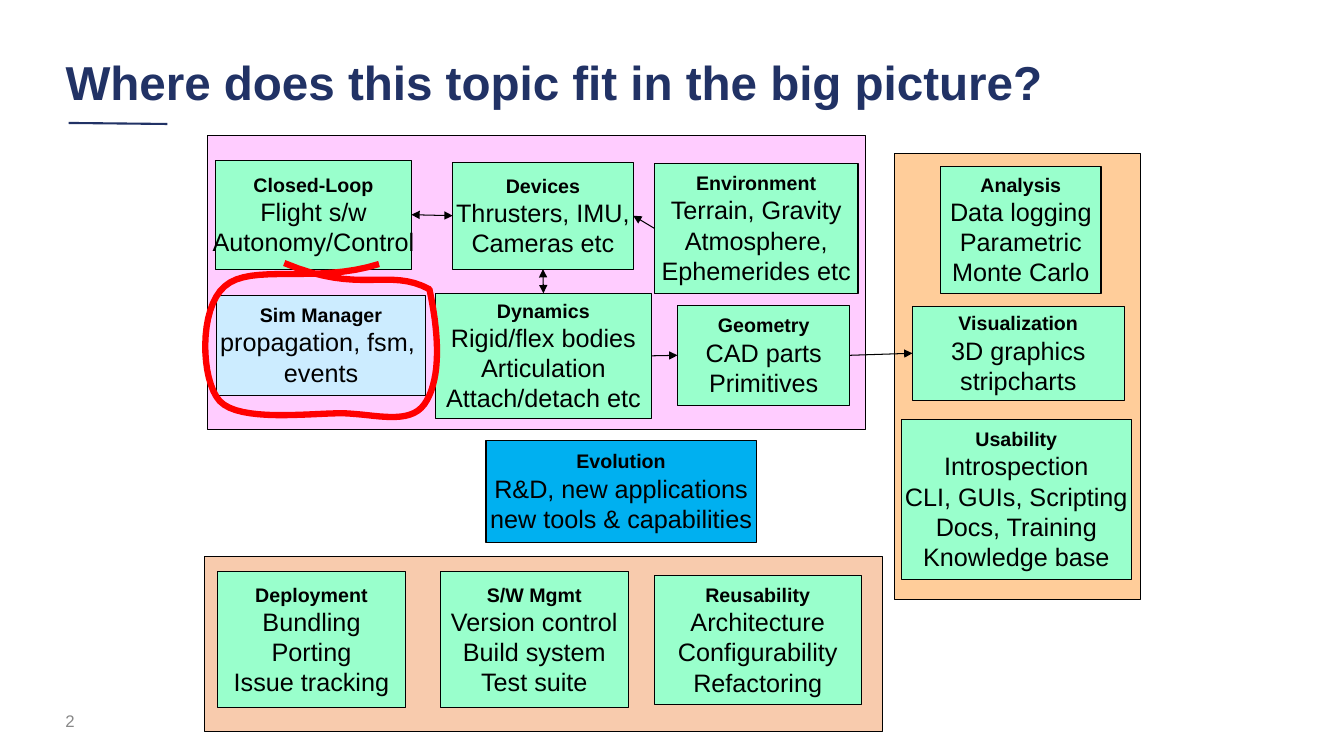
from lxml import etree
from pptx import Presentation
from pptx import util as u
from pptx.dml.color import RGBColor
from pptx.enum import shapes, text
from pptx.oxml.ns import qn

NAVY = RGBColor(0x21, 0x32, 0x65)
GRAY = RGBColor(0x88, 0x88, 0x88)
BLACK = RGBColor(0, 0, 0)
RED = RGBColor(0xFF, 0, 0)
MINT = RGBColor(0x99, 0xFF, 0xCC)
PALE_BLUE = RGBColor(0xCC, 0xEC, 0xFF)
BLUE = RGBColor(0, 0xB0, 0xF0)
PINK = RGBColor(0xFF, 0xCC, 0xFF)
ORANGE = RGBColor(0xFF, 0xCD, 0x9A)
PEACH = RGBColor(0xF8, 0xCB, 0xAD)

PX = 9144
FONT = "Arial"
TITLE = "Where does this topic fit in the big picture?"
TITLE_BOX = (55, 46, 1112, 76)
TITLE_RULE = (68, 122, 166, 123)
PAGE_NUMBER = "2"
PAGE_NUMBER_BOX = (55, 695, 300, 40)

PANELS = [
    ((887, 152, 244, 443), ORANGE),
    ((203, 552, 672, 174), PEACH),
    ((206, 134, 652, 292), PINK),
]

BOXES = [
    ((432, 291, 214, 124), MINT, "Dynamics",
     ["Rigid/flex bodies", "Articulation", "Attach/detach etc"]),
    ((449, 161, 179, 106), MINT, "Devices", ["Thrusters, IMU,", "Cameras etc"]),
    ((649, 162, 202, 129), MINT, "Environment",
     ["Terrain, Gravity", "Atmosphere,", "Ephemerides etc"]),
    ((672, 303, 171, 99), MINT, "Geometry", ["CAD parts", "Primitives"]),
    ((905, 304, 210, 93), MINT, "Visualization", ["3D graphics", "stripcharts"]),
    ((933, 165, 159, 126), MINT, "Analysis",
     ["Data logging", "Parametric", "Monte Carlo"]),
    ((214, 159, 194, 108), MINT, "Closed-Loop", ["Flight s/w", "Autonomy/Control"]),
    ((894, 416, 228, 159), MINT, "Usability",
     ["Introspection", "CLI, GUIs, Scripting", "Docs, Training", "Knowledge base"]),
    ((437, 567, 186, 135), MINT, "S/W Mgmt",
     ["Version control", "Build system", "Test suite"]),
    ((649, 571, 205, 128), MINT, "Reusability",
     ["Architecture", "Configurability", "Refactoring"]),
    ((216, 567, 186, 135), MINT, "Deployment",
     ["Bundling", "Porting", "Issue tracking"]),
    ((482, 437, 268, 101), BLUE, "Evolution",
     ["R&D, new applications", "new tools & capabilities"]),
    ((215, 293, 207, 99), PALE_BLUE, "Sim Manager", ["propagation, fsm, ", "events"]),
]

TOP, LEFT, BOTTOM, RIGHT = range(4)
ARROWS = [
    ("Dynamics", TOP, "Devices", BOTTOM, ("headEnd", "tailEnd")),
    ("Devices", LEFT, "Closed-Loop", RIGHT, ("headEnd", "tailEnd")),
    ("Environment", LEFT, "Devices", RIGHT, ("tailEnd",)),
    ("Dynamics", RIGHT, "Geometry", LEFT, ("tailEnd",)),
    ("Geometry", RIGHT, "Visualization", LEFT, ("tailEnd",)),
]

LOOP_START = (376, 262)
LOOP_CURVES = [
    ((313, 282), (249, 261), (223, 284)),
    ((197, 306), (199, 377), (218, 398)),
    ((238, 419), (306, 410), (340, 410)),
    ((373, 411), (406, 422), (421, 401)),
    ((435, 381), (438, 343), (426, 287)),
    ((385, 265), (358, 293), (282, 261)),
]
CURVE_STEPS = 16


def emu(lengths):
    return [length * PX for length in lengths]


def set_font(paragraph, size, color, bold=False):
    font = paragraph.font
    font.name, font.size, font.bold = FONT, u.Pt(size), bold
    font.color.rgb = color


def set_line(shape, color, width):
    shape.line.color.rgb = color
    shape.line.width = u.Pt(width)


def add_rectangle(slide, box, fill):
    shape = slide.shapes.add_shape(shapes.MSO_SHAPE.RECTANGLE, *emu(box))
    shape.shadow.inherit = False
    shape.fill.solid()
    shape.fill.fore_color.rgb = fill
    set_line(shape, BLACK, 0.75)
    return shape


def add_topic(slide, box, fill, heading, lines):
    shape = add_rectangle(slide, box, fill)
    frame = shape.text_frame
    frame.word_wrap = False
    frame.vertical_anchor = text.MSO_ANCHOR.MIDDLE
    for index, line in enumerate([heading] + lines):
        paragraph = frame.add_paragraph() if index else frame.paragraphs[0]
        paragraph.text = line
        paragraph.alignment = text.PP_ALIGN.CENTER
        set_font(paragraph, 18 if index else 14, BLACK, bold=not index)
    return shape


def add_line(slide, ends, color, width):
    connector = slide.shapes.add_connector(shapes.MSO_CONNECTOR.STRAIGHT, *emu(ends))
    set_line(connector, color, width)
    etree.SubElement(connector._element.spPr, qn("a:effectLst"))
    return connector


def add_arrow(slide, source, source_side, target, target_side, heads):
    connector = add_line(slide, (0, 0, 0, 0), BLACK, 0.75)
    connector.begin_connect(source, source_side)
    connector.end_connect(target, target_side)
    for head in heads:
        etree.SubElement(connector.line._get_or_add_ln(), qn(f"a:{head}"), type="triangle")


def curve_points(start, curves):
    for first, second, end in curves:
        for step in range(1, CURVE_STEPS + 1):
            t = step / CURVE_STEPS
            weights = ((1 - t) ** 3, 3 * t * (1 - t) ** 2, 3 * t * t * (1 - t), t ** 3)
            corners = (start, first, second, end)
            yield tuple(PX * sum(w * corner[axis] for w, corner in zip(weights, corners))
                        for axis in (0, 1))
        start = end


def add_loop(slide):
    builder = slide.shapes.build_freeform(*emu(LOOP_START), scale=1)
    builder.add_line_segments(curve_points(LOOP_START, LOOP_CURVES), close=False)
    loop = builder.convert_to_shape()
    loop.shadow.inherit = False
    loop.fill.background()
    set_line(loop, RED, 4.5)


def add_title(slide):
    title = slide.shapes.title
    title.left, title.top, title.width, title.height = emu(TITLE_BOX)
    title.text_frame.text = TITLE
    title.text_frame.vertical_anchor = text.MSO_ANCHOR.MIDDLE
    paragraph = title.text_frame.paragraphs[0]
    paragraph.alignment = text.PP_ALIGN.LEFT
    paragraph.line_spacing = 0.9
    set_font(paragraph, 34, NAVY, bold=True)


def add_page_number(slide):
    frame = slide.shapes.add_textbox(*emu(PAGE_NUMBER_BOX)).text_frame
    frame.word_wrap = True
    frame.vertical_anchor = text.MSO_ANCHOR.MIDDLE
    frame.text = PAGE_NUMBER
    set_font(frame.paragraphs[0], 12, GRAY)


def main():
    presentation = Presentation()
    presentation.slide_width, presentation.slide_height = emu((1333, 750))
    slide = presentation.slides.add_slide(presentation.slide_layouts[5])
    add_line(slide, TITLE_RULE, NAVY, 1.5)
    add_page_number(slide)
    add_title(slide)
    for box, fill in PANELS:
        add_rectangle(slide, box, fill)
    topics = {topic[2]: add_topic(slide, *topic) for topic in BOXES}
    for source, source_side, target, target_side, heads in ARROWS:
        add_arrow(slide, topics[source], source_side, topics[target], target_side, heads)
    add_loop(slide)
    presentation.save("out.pptx")


if __name__ == "__main__":
    main()
